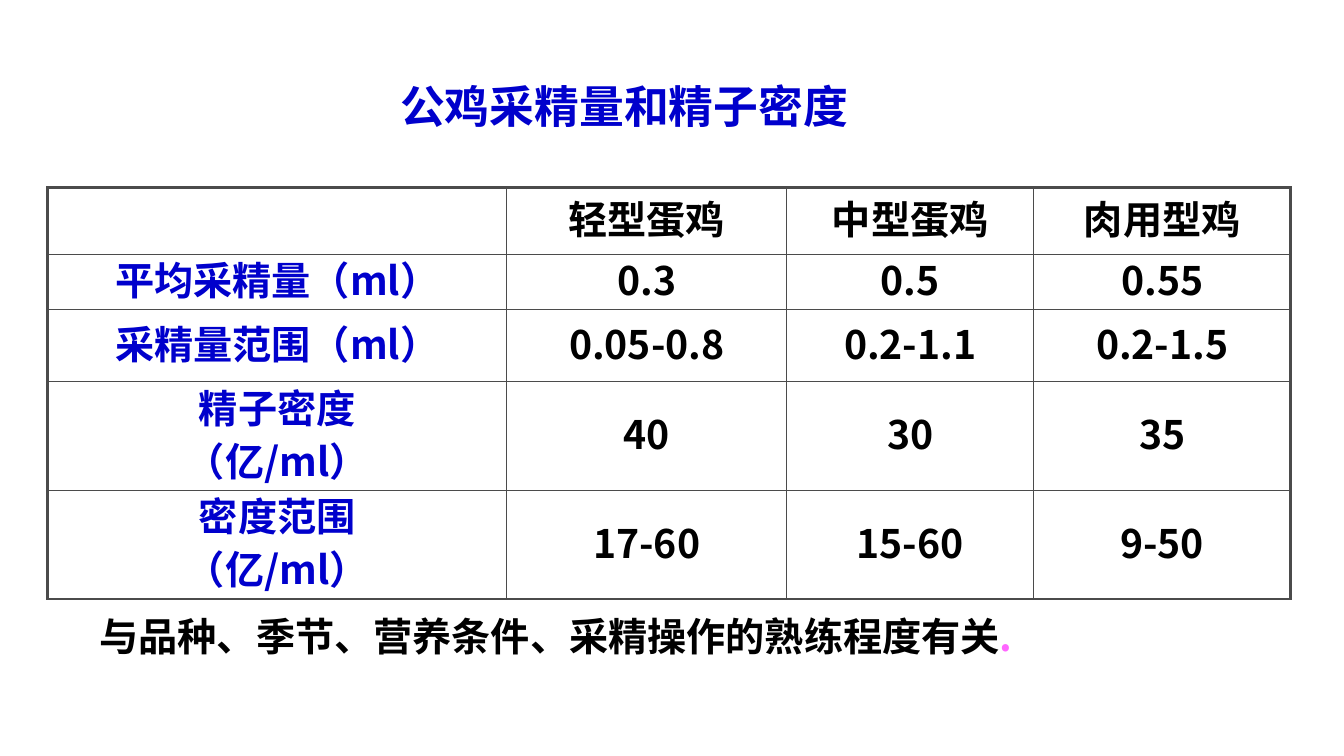
from dataclasses import dataclass

from lxml import etree
from pptx import Presentation
from pptx.dml.color import RGBColor
from pptx.enum import text as t
from pptx.oxml import ns
from pptx.util import Pt

FONT = "Noto Sans CJK SC"
BLUE = RGBColor(0x00, 0x00, 0xCC)
BLACK = RGBColor(0x00, 0x00, 0x00)
PINK = RGBColor(0xFF, 0x66, 0xFF)
GREY = RGBColor(0x4B, 0x4B, 0x4B)
THIN, THICK = 1, 2.25


@dataclass
class Row:
    height: float
    label: str
    values: tuple[str, str, str]


WIDTHS = (328, 200, 176.4, 183.6)
ROWS = (
    Row(47.5, "", ("轻型蛋鸡", "中型蛋鸡", "肉用型鸡")),
    Row(39.5, "平均采精量（ml）", ("0.3", "0.5", "0.55")),
    Row(51.5, "采精量范围（ml）", ("0.05-0.8", "0.2-1.1", "0.2-1.5")),
    Row(77.5, "精子密度\n（亿/ml）", ("40", "30", "35")),
    Row(77.5, "密度范围\n（亿/ml）", ("17-60", "15-60", "9-50")),
)


def style(para, size: float, color: RGBColor) -> None:
    """Make a paragraph bold in FONT, for Latin and East Asian text alike."""
    font = para.font
    font.name, font.size, font.bold = FONT, Pt(size), True
    font.color.rgb = color
    face = etree.SubElement(para._p.pPr.find(ns.qn("a:defRPr")), ns.qn("a:ea"))
    face.set("typeface", FONT)


def place(shape, left: float, top: float, width: float, height: float) -> None:
    shape.left, shape.top = Pt(left), Pt(top)
    shape.width, shape.height = Pt(width), Pt(height)
    frame = shape.text_frame
    frame.auto_size = t.MSO_AUTO_SIZE.NONE
    frame.vertical_anchor = t.MSO_ANCHOR.MIDDLE
    frame.word_wrap = True


def border(cell, side: str, width: float) -> None:
    line = etree.SubElement(cell._tc.get_or_add_tcPr(), ns.qn(f"a:ln{side}"))
    line.set("w", str(Pt(width)))
    fill = etree.SubElement(line, ns.qn("a:solidFill"))
    etree.SubElement(fill, ns.qn("a:srgbClr")).set("val", str(GREY))


def write(cell, words: str, color: RGBColor) -> None:
    cell.margin_left = cell.margin_right = Pt(9.4)
    cell.margin_top = cell.margin_bottom = Pt(3.6)
    cell.vertical_anchor = t.MSO_ANCHOR.MIDDLE
    cell.text = words
    for i, para in enumerate(cell.text_frame.paragraphs):
        para.alignment = t.PP_ALIGN.CENTER
        para.line_spacing = 0.8
        if i:
            para.space_before = Pt(5.6)
        style(para, 28, color)


def add_grid(slide) -> None:
    high = sum(row.height for row in ROWS)
    frame = slide.shapes.add_table(len(ROWS), len(WIDTHS), Pt(34), Pt(134),
                                   Pt(sum(WIDTHS)), Pt(high))
    table = frame.table
    table.first_row = table.horz_banding = False
    for col, width in zip(table.columns, WIDTHS):
        col.width = Pt(width)
    for r, row in enumerate(ROWS):
        table.rows[r].height = Pt(row.height)
        for c, words in enumerate((row.label, *row.values)):
            cell = table.cell(r, c)
            write(cell, words, BLACK if c else BLUE)
            edges = {"L": c == 0, "R": c == len(WIDTHS) - 1,
                     "T": r == 0, "B": r == len(ROWS) - 1}
            for side, outer in edges.items():
                border(cell, side, THICK if outer else THIN)
            cell.fill.background()


def add_title(slide) -> None:
    title = slide.shapes.title
    place(title, 64, 53, 764, 45.5)
    title.text = "公鸡采精量和精子密度"
    para = title.text_frame.paragraphs[0]
    para.alignment = t.PP_ALIGN.CENTER
    style(para, 32, BLUE)


def add_note(slide) -> None:
    note = slide.shapes.add_textbox(0, 0, 0, 0)
    place(note, 64, 434, 682, 41)
    para = note.text_frame.paragraphs[0]
    style(para, 28, BLACK)
    para.add_run().text = "与品种、季节、营养条件、采精操作的熟练程度有关"
    dot = para.add_run()
    dot.text = "."
    dot.font.color.rgb = PINK


def main() -> None:
    deck = Presentation()
    deck.slide_width, deck.slide_height = Pt(960), Pt(540)
    slide = deck.slides.add_slide(deck.slide_layouts[5])
    add_grid(slide)
    add_title(slide)
    add_note(slide)
    deck.save("out.pptx")


if __name__ == "__main__":
    main()
